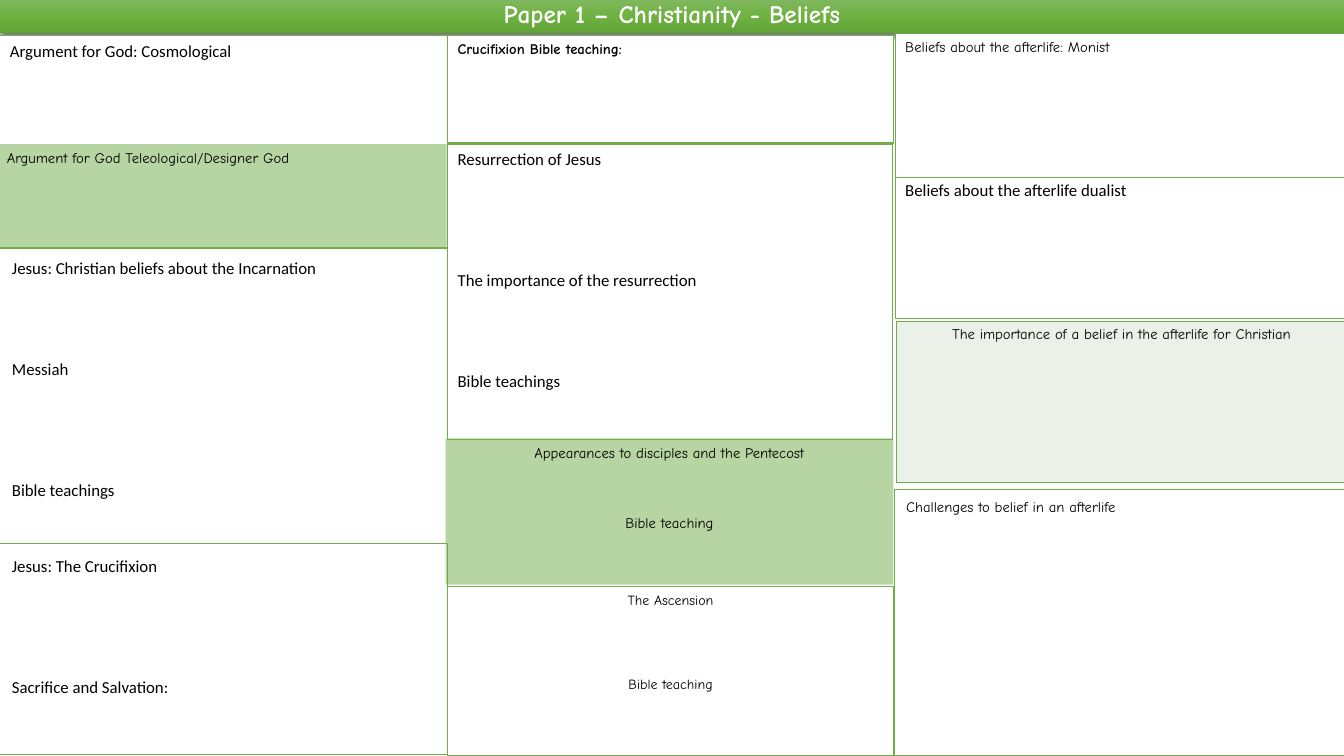
from dataclasses import dataclass

from lxml import etree
from pptx import Presentation
from pptx import util as u
from pptx.dml.color import RGBColor
from pptx.enum import shapes, text
from pptx.oxml import parse_xml
from pptx.oxml.ns import nsdecls, qn


@dataclass
class Theme:
    green: str = "70AD47"
    pale: str = "EBF1E9"
    white: str = "FFFFFF"
    black: str = "000000"
    ramp: tuple = ("81B861", "6FB242", "62A336")
    hand: str = "Comic Neue"
    plain: str = "Calibri"
    head: float = 18
    large: float = 12
    mid: float = 10.5
    small: float = 10
    thin: float = 0.75
    thick: float = 1
    pitch: float = 1.2


def write(frame, lines, font, size, color, bold=False, align="LEFT",
          anchor="TOP", pitch=1.2, space=None):
    frame.word_wrap = True
    frame.vertical_anchor = getattr(text.MSO_ANCHOR, anchor)
    for i, (words, skip) in enumerate(lines):
        para = frame.paragraphs[0] if i == 0 else frame.add_paragraph()
        para.alignment = getattr(text.PP_ALIGN, align)
        para.space_before = u.Pt(skip * size * pitch)
        if space:
            para.line_spacing = space
        run = para.add_run()
        run.text = words
        run.font.name = font
        run.font.size = u.Pt(size)
        run.font.bold = bold
        run.font.color.rgb = RGBColor.from_string(color)


class Board:
    def __init__(self, slide, theme):
        self.slide = slide
        self.theme = theme

    def style(self, **form):
        t = self.theme
        return dict(font=t.hand, size=t.mid, color=t.black, pitch=t.pitch) | form

    def title(self, at, words):
        t = self.theme
        head = self.slide.shapes.title
        head.left, head.top, head.width, head.height = map(u.Inches, at)
        write(head.text_frame, [(words, 0)],
              **self.style(size=t.head, color=t.white, bold=True,
                           align="CENTER", anchor="MIDDLE", space=0.9))
        head.text_frame.auto_size = text.MSO_AUTO_SIZE.NONE
        stops = "".join(
            f'<a:gs pos="{i * 50000}"><a:srgbClr val="{c}"/></a:gs>'
            for i, c in enumerate(t.ramp))
        ns = nsdecls("a")
        for part in (
            f'<a:prstGeom {ns} prst="rect"><a:avLst/></a:prstGeom>',
            f'<a:gradFill {ns}><a:gsLst>{stops}</a:gsLst>'
            '<a:lin ang="5400000" scaled="0"/></a:gradFill>',
            f'<a:effectLst {ns}><a:outerShdw blurRad="{u.Pt(4.5)}" '
            f'dist="{u.Pt(1.5)}" dir="5400000"><a:srgbClr val="{t.black}">'
            '<a:alpha val="63000"/></a:srgbClr></a:outerShdw></a:effectLst>',
        ):
            head._element.spPr.append(parse_xml(part))

    def box(self, at, lines=(), fill=None, line=None, width=1, alpha=None, **form):
        box = self.slide.shapes.add_shape(
            shapes.MSO_SHAPE.RECTANGLE, *map(u.Inches, at))
        box.shadow.inherit = False
        if fill:
            box.fill.solid()
            box.fill.fore_color.rgb = RGBColor.from_string(fill)
        else:
            box.fill.background()
        if alpha:
            tint = box._element.spPr.find(qn("a:solidFill"))[0]
            etree.SubElement(tint, qn("a:alpha")).set("val", str(alpha * 1000))
        if line:
            box.line.color.rgb = RGBColor.from_string(line)
            box.line.width = u.Pt(width)
        else:
            box.line.fill.background()
        if lines:
            write(box.text_frame, lines, **self.style(**form))

    def note(self, at, lines):
        note = self.slide.shapes.add_textbox(*map(u.Inches, at))
        t = self.theme
        write(note.text_frame, lines, **self.style(font=t.plain, size=t.large))

    def table(self, at, words):
        t = self.theme
        grid = self.slide.shapes.add_table(1, 1, *map(u.Inches, at)).table
        cell = grid.cell(0, 0)
        cell.fill.solid()
        cell.fill.fore_color.rgb = RGBColor.from_string(t.pale)
        write(cell.text_frame, [(words, 0)], **self.style(align="CENTER"))
        props = cell._tc.get_or_add_tcPr()
        for i, side in enumerate(("lnL", "lnR", "lnT", "lnB")):
            props.insert(i, parse_xml(
                f'<a:{side} {nsdecls("a")} w="{u.Pt(t.thick)}"><a:solidFill>'
                f'<a:srgbClr val="{t.green}"/></a:solidFill></a:{side}>'))


def main():
    deck = Presentation()
    deck.slide_width, deck.slide_height = u.Inches(13.33), u.Inches(7.5)
    t = Theme()
    b = Board(deck.slides.add_slide(deck.slide_layouts[5]), t)
    card = dict(fill=t.white, line=t.green, width=t.thick)
    edge = dict(line=t.green, width=t.thin)
    tint = dict(fill=t.green, alpha=50)

    b.title((0, -0.02, 13.33, 0.35), "Paper 1 – Christianity - Beliefs")
    b.box((4.44, 5.82, 4.42, 1.68),
          [("The Ascension", 0), ("Bible teaching", 4)],
          size=t.small, align="CENTER", **card)
    b.box((8.88, 1.76, 4.47, 1.4), **edge)
    b.box((-0.02, 0.35, 4.46, 2.11), **card)
    b.box((8.89, 4.89, 3.4, 1.24), [("Challenges to belief in an afterlife", 0)],
          fill=t.white, line=t.white)
    b.box((-0.03, 1.43, 4.46, 1.04),
          [("Argument for God Teleological/Designer God", 0)], **tint)
    b.box((8.88, 0.33, 4.47, 1.43),
          [("Beliefs about the afterlife: Monist", 0)], **card)
    b.table((8.89, 3.19, 4.47, 1.6),
            "The importance of a belief in the afterlife for Christian")
    b.box((0, 5.39, 4.44, 2.1), **edge)
    b.box((4.42, 4.35, 4.44, 1.45),
          [("Appearances to disciples and the Pentecost", 0),
           ("Bible teaching", 3)], align="CENTER", **tint)
    b.box((8.87, 4.86, 4.47, 2.64), **edge)
    b.box((4.44, 0.35, 4.42, 1.07), [("Crucifixion Bible teaching:", 0)],
          bold=True, **card)
    b.note((0.02, 2.51, 4.42, 2.93),
           [("Jesus: Christian beliefs about the Incarnation", 0),
            ("Messiah", 4), ("Bible teachings", 5)])
    b.note((8.88, 1.73, 4.47, 0.3), [("Beliefs about the afterlife dualist", 0)])
    b.note((0, 0.36, 4.24, 0.3), [("Argument for God: Cosmological", 0)])
    b.note((0.02, 5.46, 1.9, 1.92),
           [("Jesus: The Crucifixion", 0), ("Sacrifice and Salvation:", 5)])
    b.box((4.44, 1.43, 4.41, 2.93),
          [("Resurrection of Jesus", 0),
           ("The importance of the resurrection", 5), ("Bible teachings", 4)],
          font=t.plain, size=t.large, **edge)
    deck.save("out.pptx")


if __name__ == "__main__":
    main()
